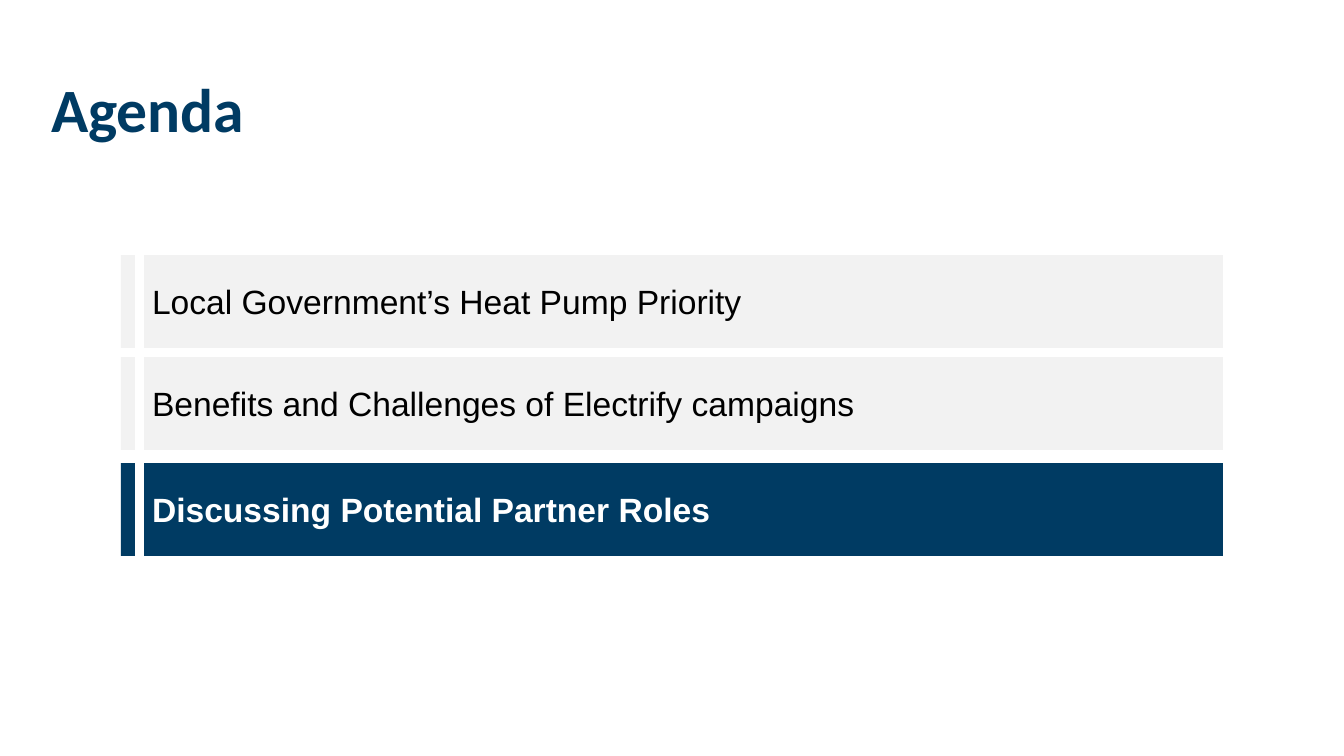
from pptx import Presentation
from pptx.dml.color import RGBColor
from pptx.enum.shapes import MSO_SHAPE
from pptx.enum.text import MSO_ANCHOR, MSO_AUTO_SIZE, PP_ALIGN
from pptx.util import Emu, Pt

EMU_PER_PX = 914400 / 100.8
NAVY, GREY, BLACK, WHITE = "003B63", "F2F2F2", "000000", "FFFFFF"


def px(length):
    return Emu(round(length * EMU_PER_PX))


def write(shape, text, color, font_format, frame_format, paragraph_format):
    """Fill the shape with one formatted paragraph."""
    frame = shape.text_frame
    frame.text = text
    paragraph = frame.paragraphs[0]
    font = paragraph.runs[0].font
    font.color.rgb = RGBColor.from_string(color)
    for target, values in (
        (font, font_format),
        (frame, frame_format),
        (paragraph, paragraph_format),
    ):
        for name, value in values.items():
            setattr(target, name, value)


presentation = Presentation()
presentation.slide_width = px(1344)
presentation.slide_height = px(756)
slide = presentation.slides.add_slide(presentation.slide_layouts[5])

title = slide.shapes.title
title_box = {"left": 41, "top": 40, "width": 1263, "height": 146}
for name, value in title_box.items():
    setattr(title, name, px(value))
write(
    title, "Agenda", NAVY,
    {"name": "Calibri", "size": Pt(44), "bold": True},
    {"vertical_anchor": MSO_ANCHOR.MIDDLE, "auto_size": MSO_AUTO_SIZE.NONE, "word_wrap": True},
    {"alignment": PP_ALIGN.LEFT, "line_spacing": 0.9},
)

ROW_HEIGHT = 93
COLUMNS = [(121, 14), (144, 1079)]  # left and width of marker and bar
AGENDA = [
    (255, "Local Government’s Heat Pump Priority", GREY, BLACK, False),
    (357, "Benefits and Challenges of Electrify campaigns", GREY, BLACK, False),
    (463, "Discussing Potential Partner Roles", NAVY, WHITE, True),
]
BAR_FRAME = {
    "vertical_anchor": MSO_ANCHOR.MIDDLE,
    "word_wrap": True,
    "margin_left": px(8),
    "margin_right": px(8),
    "margin_top": 0,
    "margin_bottom": 0,
}

for top, topic, fill_color, text_color, current in AGENDA:
    row = slide.shapes.add_group_shape()
    for left, width in COLUMNS:
        bar = row.shapes.add_shape(
            MSO_SHAPE.RECTANGLE, px(left), px(top), px(width), px(ROW_HEIGHT)
        )
        bar.shadow.inherit = False
        bar.fill.solid()
        bar.fill.fore_color.rgb = RGBColor.from_string(fill_color)
        bar.line.fill.background()
    write(
        bar, topic, text_color,
        {"name": "Arial", "size": Pt(24), "bold": current},
        BAR_FRAME,
        {"alignment": PP_ALIGN.LEFT},
    )

presentation.save("out.pptx")
